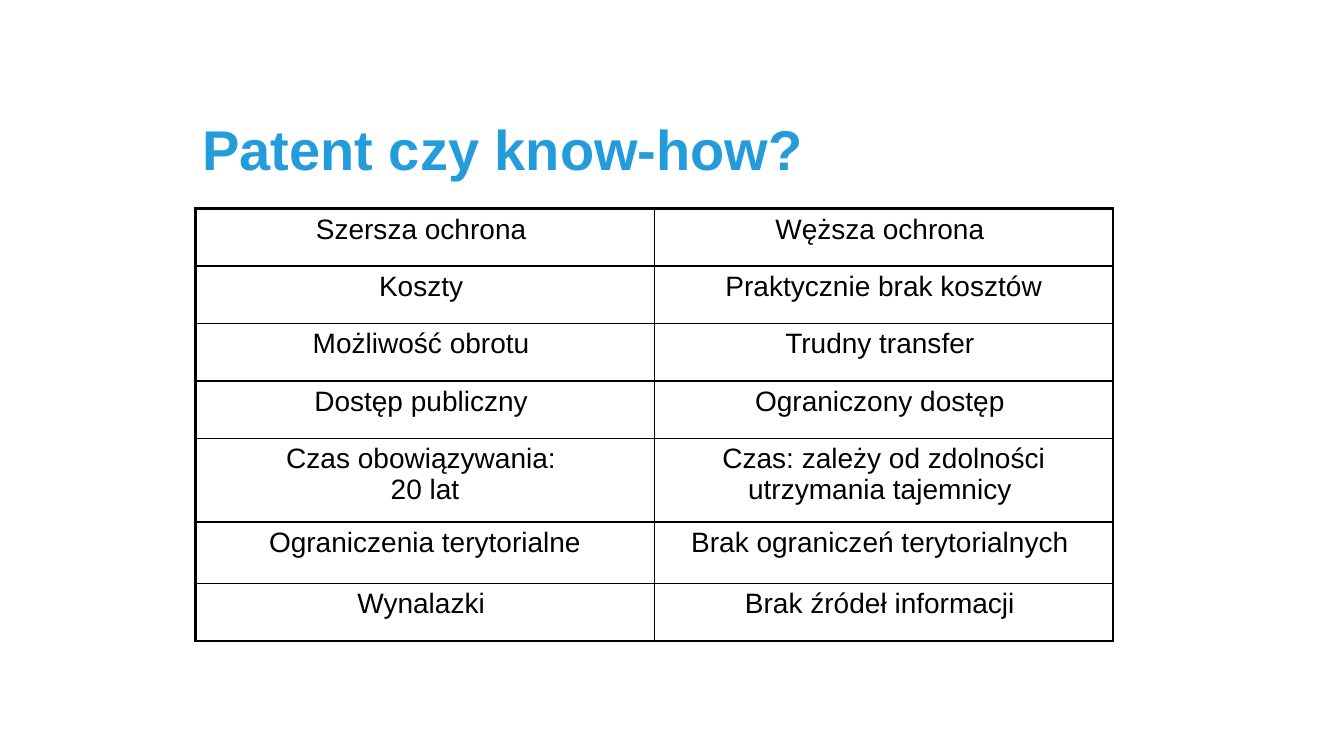
"""Build the slide comparing patents with know-how."""
from lxml import etree
from pptx import Presentation
from pptx.dml.color import RGBColor
from pptx.enum.text import MSO_ANCHOR, PP_ALIGN
from pptx.oxml.ns import qn
from pptx.util import Inches, Pt

MIDDLE = MSO_ANCHOR.MIDDLE
CENTER = PP_ALIGN.CENTER
ROW_HEIGHTS = [0.57, 0.57, 0.57, 0.57, 0.83, 0.61, 0.57]
COMPARISON = [
    ("Szersza ochrona ", "Węższa ochrona "),
    ("Koszty ", "Praktycznie brak kosztów"),
    ("Możliwość obrotu ", "Trudny transfer "),
    ("Dostęp publiczny ", "Ograniczony dostęp "),
    ("Czas obowiązywania: \v20 lat", "Czas: zależy od zdolności utrzymania tajemnicy "),
    ("Ograniczenia terytorialne", "Brak ograniczeń terytorialnych "),
    ("Wynalazki ", "Brak źródeł informacji "),
]


def format_text(paragraph, color, **values):
    paragraph.font.color.rgb = RGBColor.from_string(color)
    for name, value in values.items():
        setattr(paragraph.font, name, value)


def add_border(cell, side, width):
    line = etree.SubElement(cell._tc.get_or_add_tcPr(), qn(f"a:ln{side}"), w=str(Pt(width)))
    fill = etree.SubElement(line, qn("a:solidFill"))
    etree.SubElement(fill, qn("a:srgbClr"), val="000000")


presentation = Presentation()
presentation.slide_width = Inches(13.33)
presentation.slide_height = Inches(7.5)
slide = presentation.slides.add_slide(presentation.slide_layouts[6])

title = slide.shapes.add_textbox(Inches(1.91), Inches(1.02), Inches(8.74), Inches(0.99))
title.text_frame.word_wrap = True
title.text_frame.vertical_anchor = MIDDLE
title.text_frame.text = "Patent czy know-how?"
heading = title.text_frame.paragraphs[0]
heading.line_spacing = 0.9
format_text(heading, "249CDC", name="Arial", size=Pt(40), bold=True)

last_row = len(COMPARISON) - 1
table = slide.shapes.add_table(
    len(COMPARISON), 2, Inches(1.94), Inches(2.07), Inches(9.1), Inches(sum(ROW_HEIGHTS))
).table
table.first_row = False
table.horz_banding = False

for row_index, (height, texts) in enumerate(zip(ROW_HEIGHTS, COMPARISON)):
    table.rows[row_index].height = Inches(height)
    for column_index, text in enumerate(texts):
        cell = table.cell(row_index, column_index)
        outer_sides = {
            "L": column_index == 0,
            "R": column_index == 1,
            "T": row_index == 0,
            "B": row_index == last_row,
        }
        for side, is_outer in outer_sides.items():
            add_border(cell, side, 2.25 if is_outer else 1)
        cell.fill.background()
        cell.text = text
        paragraph = cell.text_frame.paragraphs[0]
        paragraph.alignment = CENTER
        format_text(paragraph, "000000", name="Arial", size=Pt(20), bold=False)

presentation.save("out.pptx")
